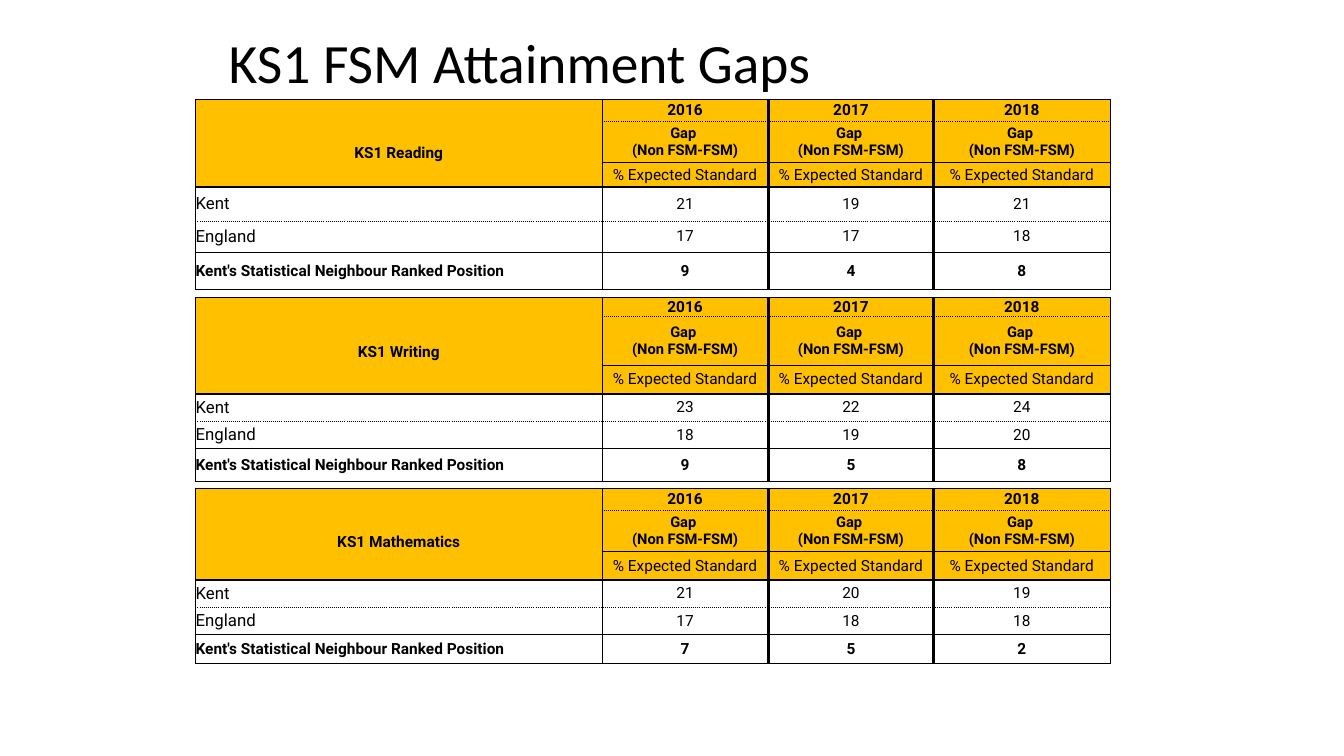
from dataclasses import dataclass

from lxml.etree import SubElement
from pptx import Presentation
from pptx.dml.color import RGBColor as RGB
from pptx.enum.text import MSO_ANCHOR as ANCHOR, PP_ALIGN as ALIGN
from pptx.oxml.ns import qn
from pptx.util import Inches, Pt


@dataclass
class Theme:
    ink: RGB = RGB(0, 0, 0)
    header: RGB = RGB(0xFF, 0xC0, 0x00)
    title_font: str = "Calibri"
    table_font: str = "Roboto"
    title_size: float = 39.6
    place_size: float = 12
    body_size: float = 11
    gap_size: float = 10.5
    spacer_size: float = 8


theme = Theme()


def style_text(paragraph, **formats):
    for name, value in formats.items():
        setattr(paragraph.runs[0].font, name, value)
    paragraph.runs[0].font.color.rgb = theme.ink


def draw_border(cell, side, rule):
    border = SubElement(cell._tc.get_or_add_tcPr(), qn(f"a:ln{side}"))
    if rule is None:
        SubElement(border, qn("a:noFill"))
        return
    width, dash = rule
    border.set("w", str(Pt(width)))
    paint = SubElement(border, qn("a:solidFill"))
    SubElement(paint, qn("a:srgbClr")).set("val", str(theme.ink))
    SubElement(border, qn("a:prstDash")).set("val", dash)


THIN, DOTTED, THICK = (0.5, "solid"), (0.5, "sysDot"), (2, "solid")
row_rules = [THIN, DOTTED, THIN, THICK, DOTTED, THIN, THIN]
label_rules = [THIN, None, None, THICK, DOTTED, THIN, THIN]
column_rules = [THIN, THIN, THICK, THICK, THIN]
column_widths = [4.03, 1.65, 1.64, 1.75]
HEADER_ROWS, GAP_ROW, EXPECTED_ROW, RANK_ROW = 3, 1, 2, 5

subjects = [
    ("KS1 Reading", 0.99, [0.21, 0.41, 0.24, 0.34, 0.31, 0.37],
     [21, 19, 21], [17, 17, 18], [9, 4, 8]),
    ("KS1 Writing", 2.95, [0.19, 0.48, 0.29, 0.27, 0.27, 0.33],
     [23, 22, 24], [18, 19, 20], [9, 5, 8]),
    ("KS1 Mathematics", 4.84, [0.22, 0.41, 0.28, 0.27, 0.27, 0.29],
     [21, 20, 19], [17, 18, 18], [7, 5, 2]),
]

deck = Presentation()
deck.slide_width, deck.slide_height = Inches(13.33), Inches(7.5)
slide = deck.slides.add_slide(deck.slide_layouts[6])

title = slide.shapes.add_textbox(Inches(2.17), Inches(0.3), Inches(9), Inches(0.69)).text_frame
title.word_wrap = True
title.vertical_anchor = ANCHOR.MIDDLE
title.text = "KS1 FSM Attainment Gaps"
title.paragraphs[0].line_spacing = 0.9
style_text(title.paragraphs[0], name=theme.title_font, size=Pt(theme.title_size))

for subject, top, row_heights, kent, england, rank in subjects:
    content = [
        ["", "2016", "2017", "2018"],
        [subject] + ["Gap \n(Non FSM-FSM)"] * 3,
        [""] + ["% Expected Standard"] * 3,
        ["Kent", *kent],
        ["England", *england],
        ["Kent's Statistical Neighbour Ranked Position", *rank],
    ]
    gaps = slide.shapes.add_table(
        len(row_heights), len(column_widths), Inches(1.94), Inches(top),
        Inches(sum(column_widths)), Inches(sum(row_heights))).table
    gaps.first_row = gaps.horz_banding = False
    for column, width in zip(gaps.columns, column_widths):
        column.width = Inches(width)

    for r, entries in enumerate(content):
        gaps.rows[r].height = Inches(row_heights[r])
        for c, entry in enumerate(entries):
            cell = gaps.cell(r, c)
            is_header, is_label = r < HEADER_ROWS, c == 0
            is_subject = is_label and r == GAP_ROW
            rules = label_rules if is_label else row_rules
            edges = {"L": column_rules[c], "R": column_rules[c + 1],
                     "T": rules[r], "B": rules[r + 1]}
            for side, rule in edges.items():
                draw_border(cell, side, rule)

            if is_header:
                cell.fill.solid()
                cell.fill.fore_color.rgb = theme.header
            else:
                cell.fill.background()

            layout = {"margin_left": 0, "margin_right": 0, "margin_bottom": 0,
                      "margin_top": Inches(0.23) if is_subject else 0,
                      "vertical_anchor": ANCHOR.MIDDLE, "text": str(entry)}
            for name, value in layout.items():
                setattr(cell, name, value)

            size = theme.body_size
            if r == GAP_ROW and not is_label:
                size = theme.gap_size
            elif is_label and HEADER_ROWS <= r < RANK_ROW:
                size = theme.place_size
            for paragraph in cell.text_frame.paragraphs:
                paragraph.alignment = ALIGN.CENTER if is_header or not is_label else ALIGN.LEFT
                if entry == "":
                    spacer = SubElement(paragraph._p, qn("a:endParaRPr"))
                    spacer.set("sz", str(theme.spacer_size * 100))
                    continue
                style_text(paragraph, name=theme.table_font, size=Pt(size),
                           bold=r in (0, GAP_ROW, RANK_ROW))

deck.save("out.pptx")
